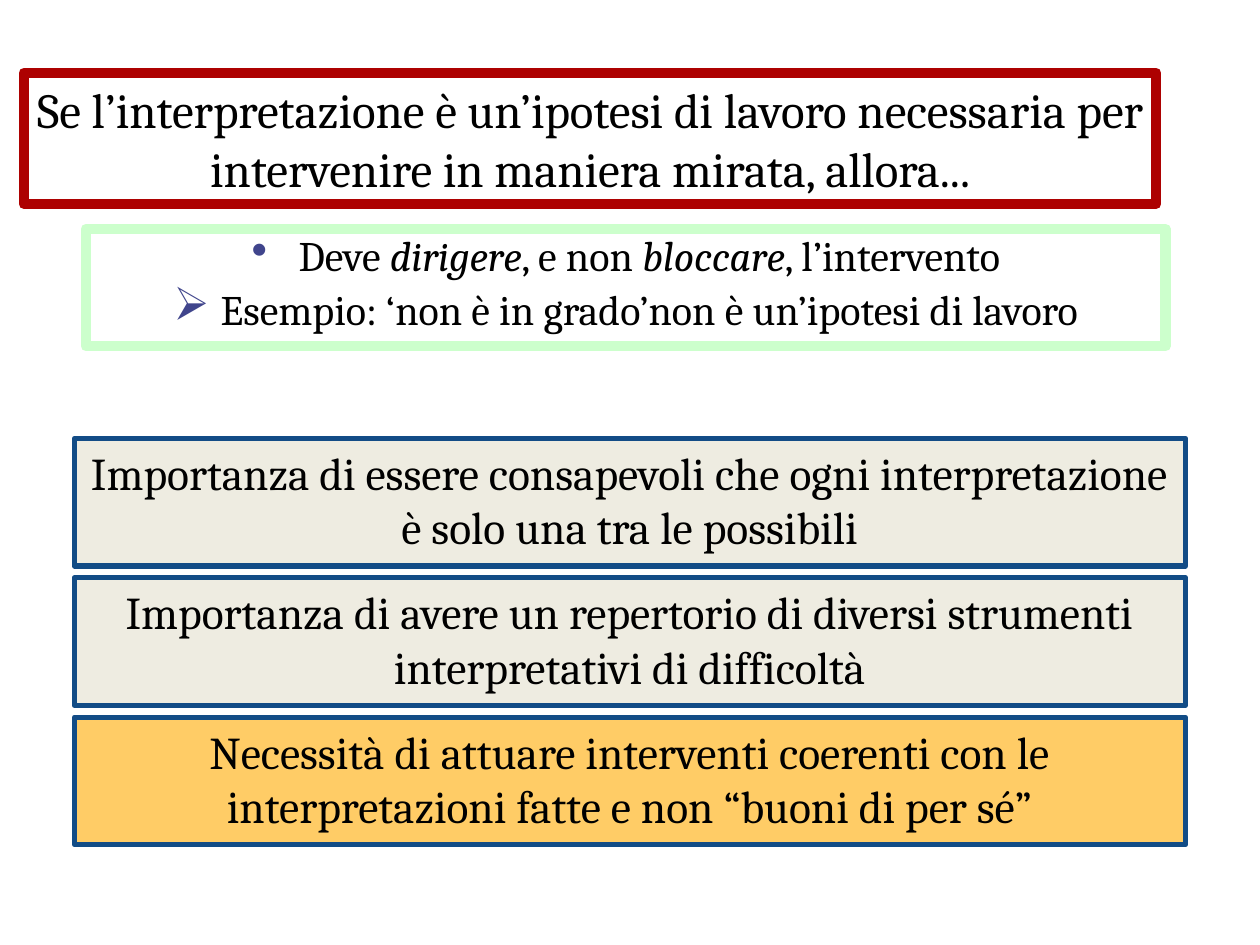
"""Build the slide on interpretation as a working hypothesis."""
from dataclasses import dataclass
from typing import Optional

from lxml import etree
from pptx import Presentation
from pptx import util as u
from pptx.dml.color import RGBColor
from pptx.enum import shapes, text
from pptx.oxml import ns

BLACK = RGBColor(0x00, 0x00, 0x00)
WHITE = RGBColor(0xFF, 0xFF, 0xFF)
RED = RGBColor(0xAD, 0x01, 0x01)
GREEN = RGBColor(0xCC, 0xFF, 0xCC)
BLUE = RGBColor(0x12, 0x4C, 0x86)
CREAM = RGBColor(0xEE, 0xEC, 0xE1)
ORANGE = RGBColor(0xFF, 0xCC, 0x66)
VIOLET = RGBColor(0x40, 0x45, 0x8C)

FONT = "Cambria"
HANGING = u.Cm(0.95)
FIRST_TOP = 8.84
STEP = 2.81


@dataclass
class Line:
    spans: list[str]
    bullet: str = ""


@dataclass
class Panel:
    left: float
    top: float
    width: float
    height: float
    fill: Optional[RGBColor]
    border: RGBColor
    border_width: float
    size: int
    lines: list[Line]


def conclusion(index: int, wording: str, fill: RGBColor) -> Panel:
    """Describe one of the evenly spaced concluding panels."""
    top = FIRST_TOP + index * STEP
    return Panel(1.5, top, 22.4, 2.57, fill, BLUE, 3, 26, [Line([wording])])


PANELS = [
    Panel(0.48, 1.47, 22.83, 2.64, WHITE, RED, 6, 28, [
        Line(["Se l’interpretazione è un’ipotesi di lavoro necessaria per "
              "intervenire in maniera mirata, allora..."]),
    ]),
    Panel(1.73, 4.62, 21.77, 2.36, None, GREEN, 6, 24, [
        Line(["Deve ", "dirigere", ", e non ", "bloccare", ", l’intervento"], "•"),
        Line(["Esempio: ‘non è in grado’non è un’ipotesi di lavoro"], "➢"),
    ]),
    conclusion(0, "Importanza di essere consapevoli che ogni interpretazione "
                  "è solo una tra le possibili", CREAM),
    conclusion(1, "Importanza di avere un repertorio di diversi strumenti "
                  "interpretativi di difficoltà", CREAM),
    conclusion(2, "Necessità di attuare interventi coerenti con le "
                  "interpretazioni fatte e non “buoni di per sé”", ORANGE),
]


def add_bullet(para, char: str) -> None:
    """Give a paragraph a coloured bullet with a hanging indent."""
    properties = para._p.get_or_add_pPr()
    properties.set("marL", str(HANGING))
    properties.set("indent", str(-HANGING))
    colour = etree.SubElement(properties, ns.qn("a:buClr"))
    etree.SubElement(colour, ns.qn("a:srgbClr"), val=str(VIOLET))
    etree.SubElement(properties, ns.qn("a:buSzPct"), val="110000")
    etree.SubElement(properties, ns.qn("a:buChar"), char=char)


def write_line(para, line: Line, size: int) -> None:
    """Write a line whose every second span is italic."""
    if line.bullet:
        add_bullet(para, line.bullet)
        para.line_spacing = 0.9
    para.alignment = text.PP_ALIGN.CENTER
    for index, wording in enumerate(line.spans):
        span = para.add_run()
        span.text = wording
        span.font.name = FONT
        span.font.size = u.Pt(size)
        span.font.italic = index % 2 == 1
        span.font.color.rgb = BLACK


def draw_panel(page, panel: Panel) -> None:
    """Draw a bordered rectangle with its lines of text."""
    box = page.shapes.add_shape(
        shapes.MSO_SHAPE.RECTANGLE, u.Cm(panel.left), u.Cm(panel.top),
        u.Cm(panel.width), u.Cm(panel.height))
    box.shadow.inherit = False
    if panel.fill is None:
        box.fill.background()
    else:
        box.fill.solid()
        box.fill.fore_color.rgb = panel.fill
    box.line.color.rgb = panel.border
    box.line.width = u.Pt(panel.border_width)
    frame = box.text_frame
    frame.word_wrap = True
    frame.vertical_anchor = text.MSO_ANCHOR.TOP
    frame.margin_left = frame.margin_right = u.Cm(0.25)
    frame.margin_top = frame.margin_bottom = u.Cm(0.13)
    for index, line in enumerate(panel.lines):
        para = frame.add_paragraph() if index else frame.paragraphs[0]
        write_line(para, line, panel.size)
        if index:
            para.space_before = u.Pt(0.2 * panel.size)


def main() -> None:
    """Create the deck and save it."""
    deck = Presentation()
    deck.slide_width, deck.slide_height = u.Cm(25.4), u.Cm(19.05)
    page = deck.slides.add_slide(deck.slide_layouts[6])
    for panel in PANELS:
        draw_panel(page, panel)
    deck.save("out.pptx")


if __name__ == "__main__":
    main()
